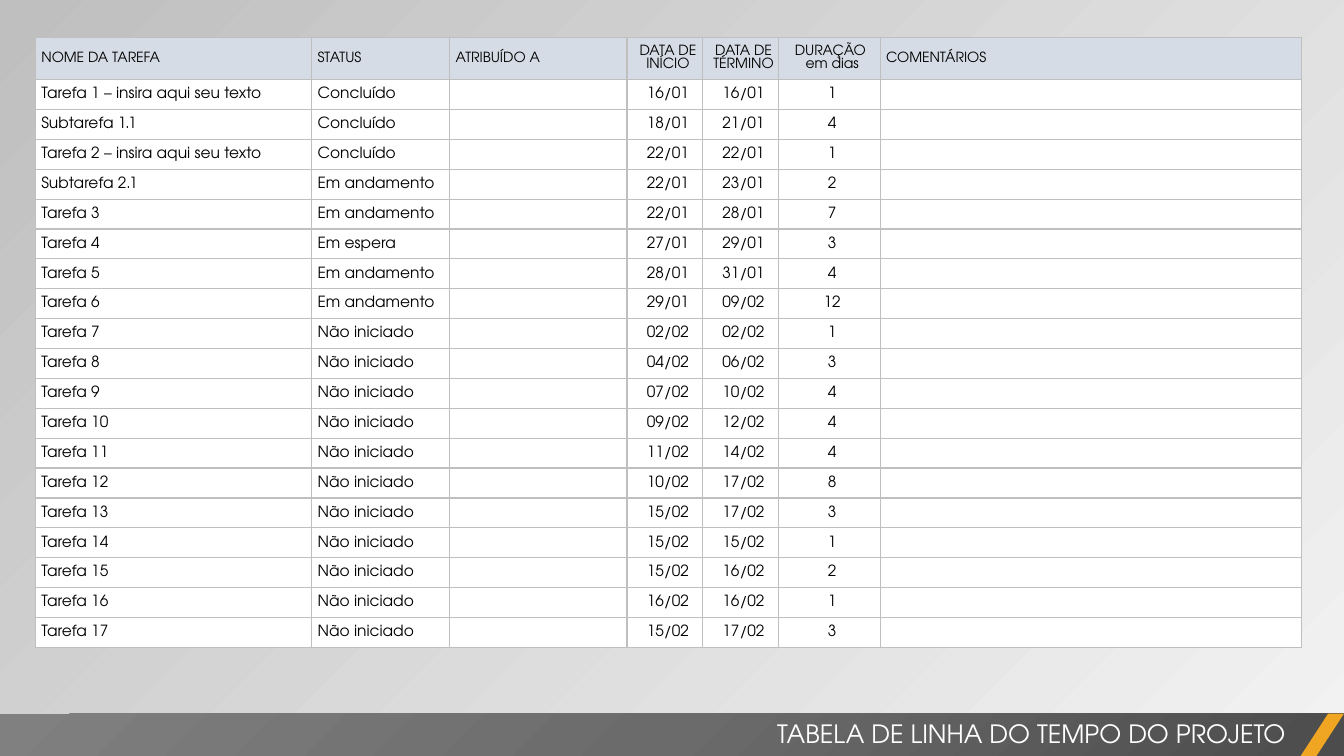
import pptx
import pptx.dml.color
import pptx.enum.shapes
import pptx.enum.text
import pptx.oxml
import pptx.oxml.ns
import pptx.util
from lxml import etree

RGBColor = pptx.dml.color.RGBColor
Inches = pptx.util.Inches
Pt = pptx.util.Pt
qn = pptx.oxml.ns.qn
ALIGN = pptx.enum.text.PP_ALIGN
ANCHOR = pptx.enum.text.MSO_ANCHOR
SHAPE = pptx.enum.shapes.MSO_SHAPE

FONT = "TeX Gyre Adventor"
BLACK = RGBColor(0x00, 0x00, 0x00)
WHITE = RGBColor(0xFF, 0xFF, 0xFF)
PALE_BLUE = RGBColor(0xD6, 0xDC, 0xE5)
GRID_GRAY = RGBColor(0xBF, 0xBF, 0xBF)
LIGHT_GRAY = RGBColor(0xF2, 0xF2, 0xF2)
DARK_GRAY = RGBColor(0x4C, 0x4C, 0x4C)
MEDIUM_GRAY = RGBColor(0x6B, 0x6B, 0x6B)
SOFT_GRAY = RGBColor(0x80, 0x80, 0x80)
ORANGE = RGBColor(0xF0, 0xA6, 0x22)

SLIDE_WIDTH, SLIDE_HEIGHT = 13.33, 7.5
COLUMN_WIDTHS = (2.74, 1.37, 1.76, 0.75, 0.75, 1.01, 4.18)
HEADER_HEIGHT = 0.42
CENTERED_COLUMNS = (3, 4, 5)

HEADERS = ("NOME DA TAREFA", "STATUS", "ATRIBUÍDO A", "DATA DE INÍCIO",
           "DATA DE TÉRMINO", "DURAÇÃO \nem dias", "COMENTÁRIOS")
DONE, ACTIVE, WAITING, PENDING = "Concluído", "Em andamento", "Em espera", "Não iniciado"
TASKS = (
    ("Tarefa 1 – insira aqui seu texto", DONE, "16/01", "16/01", 1),
    ("Subtarefa 1.1", DONE, "18/01", "21/01", 4),
    ("Tarefa 2 – insira aqui seu texto", DONE, "22/01", "22/01", 1),
    ("Subtarefa 2.1", ACTIVE, "22/01", "23/01", 2),
    ("Tarefa 3", ACTIVE, "22/01", "28/01", 7),
    ("Tarefa 4", WAITING, "27/01", "29/01", 3),
    ("Tarefa 5", ACTIVE, "28/01", "31/01", 4),
    ("Tarefa 6", ACTIVE, "29/01", "09/02", 12),
    ("Tarefa 7", PENDING, "02/02", "02/02", 1),
    ("Tarefa 8", PENDING, "04/02", "06/02", 3),
    ("Tarefa 9", PENDING, "07/02", "10/02", 4),
    ("Tarefa 10", PENDING, "09/02", "12/02", 4),
    ("Tarefa 11", PENDING, "11/02", "14/02", 4),
    ("Tarefa 12", PENDING, "10/02", "17/02", 8),
    ("Tarefa 13", PENDING, "15/02", "17/02", 3),
    ("Tarefa 14", PENDING, "15/02", "15/02", 1),
    ("Tarefa 15", PENDING, "15/02", "16/02", 2),
    ("Tarefa 16", PENDING, "16/02", "16/02", 1),
    ("Tarefa 17", PENDING, "15/02", "17/02", 3),
)


def fill_gradient(fill, element, stops, direction):
    """Give a fill the (position, colour, opacity) stops and direction XML."""
    fill.gradient()
    gradient = element.find(".//" + qn("a:gradFill"))
    gradient.clear()
    gradient.set("rotWithShape", "1")
    stop_xml = "".join(
        f'<a:gs pos="{position * 1000}"><a:srgbClr val="{color}">'
        f'<a:alpha val="{opacity * 1000}"/></a:srgbClr></a:gs>'
        for position, color, opacity in stops)
    namespace = pptx.oxml.ns.nsdecls("a")
    for xml in (f"<a:gsLst {namespace}>{stop_xml}</a:gsLst>",
                direction.format(namespace=namespace)):
        gradient.append(pptx.oxml.parse_xml(xml))


def style_font(font, size, color):
    """Set the slide's typeface with a size and colour."""
    font.name = FONT
    font.size = Pt(size)
    font.bold = False
    font.color.rgb = color


def add_borders(cell):
    """Draw a thin gray line on every side of a cell."""
    properties = cell._tc.get_or_add_tcPr()
    for side in ("a:lnL", "a:lnR", "a:lnT", "a:lnB"):
        line = etree.SubElement(properties, qn(side), w=str(Pt(1)))
        solid = etree.SubElement(line, qn("a:solidFill"))
        etree.SubElement(solid, qn("a:srgbClr"), val=str(GRID_GRAY))


def fill_cell(cell, text, size, color, centered):
    """Write and format one table cell."""
    cell.text = text
    cell.margin_left = Inches(0.06)
    cell.margin_right = cell.margin_top = cell.margin_bottom = 0
    cell.vertical_anchor = ANCHOR.MIDDLE
    add_borders(cell)
    cell.fill.solid()
    cell.fill.fore_color.rgb = color
    for paragraph in cell.text_frame.paragraphs:
        paragraph.alignment = ALIGN.CENTER if centered else ALIGN.LEFT
        style_font(paragraph.font, size, BLACK)
        if not text:
            etree.SubElement(paragraph._p, qn("a:endParaRPr"), sz=str(size * 100))


def add_task_table(slide, left, top, height):
    """Place the task table at the given point, its rows sharing the height."""
    rows = [HEADERS] + [(name, status, "", start, end, str(days), "")
                        for name, status, start, end, days in TASKS]
    row_height = (height - HEADER_HEIGHT) / len(TASKS)
    table = slide.shapes.add_table(
        len(rows), len(HEADERS), Inches(left), Inches(top),
        Inches(sum(COLUMN_WIDTHS)), Inches(height)).table
    table.first_row = table.horz_banding = False
    for column, width in zip(table.columns, COLUMN_WIDTHS):
        column.width = Inches(width)
    for row_index, values in enumerate(rows):
        header = row_index == 0
        table.rows[row_index].height = Inches(HEADER_HEIGHT if header else row_height)
        size, color = (10, PALE_BLUE) if header else (11, WHITE)
        for column_index, text in enumerate(values):
            fill_cell(table.cell(row_index, column_index), text, size, color,
                      column_index in CENTERED_COLUMNS)


def add_footer(slide, left, top, width, height):
    """Place the title band, its slanted accent and the title in the box."""
    band = slide.shapes.add_shape(SHAPE.RECTANGLE, Inches(left), Inches(top),
                                  Inches(width), Inches(height))
    fill_gradient(
        band.fill, band.element,
        ((0, DARK_GRAY, 100), (50, MEDIUM_GRAY, 100), (100, SOFT_GRAY, 100)),
        '<a:path {namespace} path="circle"><a:fillToRect l="100000" t="100000"/></a:path>')
    accent_width = 0.43
    accent = slide.shapes.add_shape(
        SHAPE.PARALLELOGRAM, Inches(left + width - accent_width), Inches(top),
        Inches(accent_width), Inches(height))
    accent.adjustments[0] = 0.65
    accent.fill.solid()
    accent.fill.fore_color.rgb = ORANGE
    for shape in (band, accent):
        shape.shadow.inherit = False
        shape.line.fill.background()

    title = slide.shapes.title
    title_width = 7.6
    title.left = Inches(left + width - 0.48 - title_width)
    title.top = Inches(top)
    title.width, title.height = Inches(title_width), Inches(0.4)
    title.text_frame.text = "TABELA DE LINHA DO TEMPO DO PROJETO"
    title.text_frame.word_wrap = True
    title.text_frame.auto_size = pptx.enum.text.MSO_AUTO_SIZE.SHAPE_TO_FIT_TEXT
    title.text_frame.vertical_anchor = ANCHOR.TOP
    paragraph = title.text_frame.paragraphs[0]
    paragraph.alignment = ALIGN.RIGHT
    style_font(paragraph.font, 18, WHITE)
    title.element.getparent().append(title.element)


def main():
    """Build and save the project timeline slide."""
    presentation = pptx.Presentation()
    presentation.slide_width = Inches(SLIDE_WIDTH)
    presentation.slide_height = Inches(SLIDE_HEIGHT)
    slide = presentation.slides.add_slide(presentation.slide_layouts[5])
    fill_gradient(slide.background.fill, slide.element,
                  ((0, LIGHT_GRAY, 40), (100, GRID_GRAY, 100)),
                  '<a:lin {namespace} ang="13500000" scaled="0"/>')
    add_task_table(slide, 0.35, 0.37, 6.06)
    add_footer(slide, 0, 7.08, SLIDE_WIDTH, 0.42)
    presentation.save("out.pptx")


if __name__ == "__main__":
    main()
